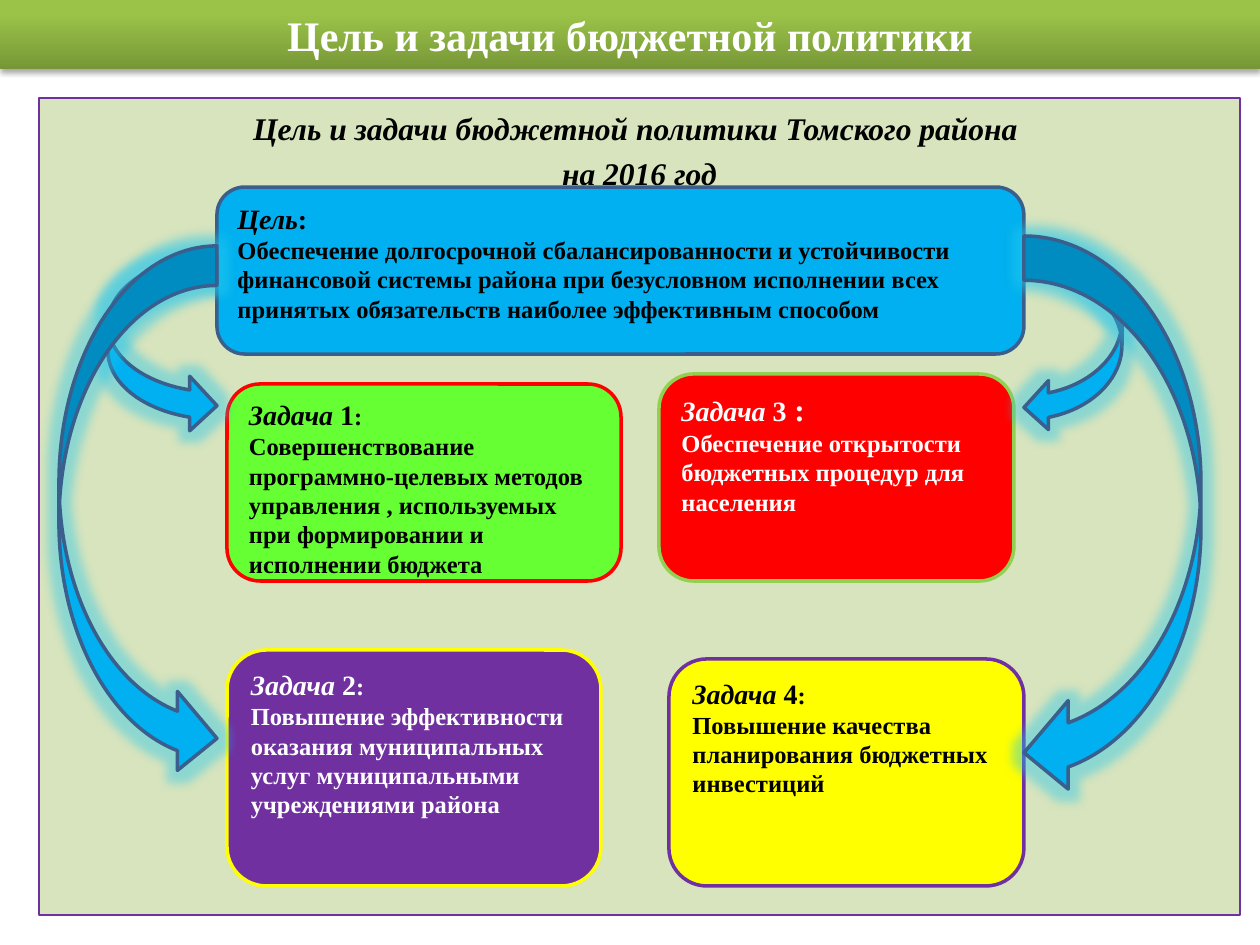
from lxml.etree import SubElement
from pptx import Presentation
from pptx.dml.color import RGBColor
from pptx.enum.shapes import MSO_SHAPE as Shape
from pptx.enum.text import MSO_ANCHOR as Anchor, MSO_AUTO_SIZE as AutoSize, PP_ALIGN as Align
from pptx.oxml.ns import qn
from pptx.util import Emu, Inches, Pt

PX_PER_INCH = 126
FONT = "Times New Roman"
COLORS = {
    "black": "000000", "white": "FFFFFF", "olive": "779737", "lime": "9BC348",
    "panel": "D7E4BD", "purple": "7030A0", "green": "66FF33", "red": "FF0000",
    "yellow": "FFFF00", "leaf": "92D050", "sky": "00B0F0", "navy": "3A5F8C",
    "glow": "1CC4EE",
}


def px(length):
    return Emu(round(length * Inches(1) / PX_PER_INCH))


def rgb(name):
    return RGBColor.from_string(COLORS[name])


def place(part, box):
    part.left, part.top, part.width, part.height = map(px, box)


def paint(part, fill, line, width=2):
    part.fill.solid()
    part.fill.fore_color.rgb = rgb(fill)
    part.line.color.rgb = rgb(line)
    part.line.width = Pt(width)


def add_effect(part, kind, color, opacity, **settings):
    part.shadow.inherit = False
    effects = part._element.spPr.find(qn("a:effectLst"))
    effect = SubElement(effects, qn(f"a:{kind}"), {k: str(v) for k, v in settings.items()})
    tint = SubElement(effect, qn("a:srgbClr"), val=COLORS[color])
    SubElement(tint, qn("a:alpha"), val=str(opacity * 1000))


def style(paragraph, color, size=None, italic=None, align=Align.LEFT):
    paragraph.alignment = align
    font = paragraph.font
    font.name, font.bold, font.italic = FONT, True, italic
    font.color.rgb = rgb(color)
    if size:
        font.size = Pt(size)


def title_bar(title, box):
    place(title, box)
    title.fill.gradient()
    title.fill.gradient_angle = 90
    for stop, color, position in zip(title.fill.gradient_stops, ("olive", "lime"), (0, 0.8)):
        stop.color.rgb = rgb(color)
        stop.position = position
    add_effect(title, "outerShdw", "black", 35, blurRad=Pt(3.1), dist=Pt(1.8),
               dir=90 * 60000, rotWithShape=0)
    frame = title.text_frame
    frame.auto_size = AutoSize.NONE
    frame.vertical_anchor = Anchor.MIDDLE
    frame.text = "Цель и задачи бюджетной политики"
    style(frame.paragraphs[0], "white", 24, align=Align.CENTER)


def heading_panel(body, box):
    place(body, box)
    paint(body, "panel", "purple", 0.75)
    frame = body.text_frame
    frame.auto_size = AutoSize.NONE
    frame.margin_top = px(11)
    frame.text = "Цель и задачи бюджетной политики Томского района \nна 2016 год"
    for paragraph, gap in zip(frame.paragraphs, (0, 4)):
        properties = paragraph._p.get_or_add_pPr()
        properties.set("marL", "0")
        properties.set("indent", "0")
        SubElement(properties, qn("a:buNone"))
        paragraph.space_before = Pt(gap)
        style(paragraph, "black", 18, italic=True, align=Align.CENTER)


def card(shapes, box, fill, line, color, heading, text, inset=6):
    part = shapes.add_shape(Shape.ROUNDED_RECTANGLE, *map(px, box))
    part.shadow.inherit = False
    paint(part, fill, line)
    frame = part.text_frame
    frame.word_wrap = True
    frame.vertical_anchor = Anchor.TOP
    frame.margin_top = px(inset)
    label = frame.paragraphs[0]
    style(label, color)
    for index, (words, size) in enumerate(heading):
        run = label.add_run()
        run.text = words
        run.font.size = Pt(size)
        run.font.italic = index == 0
    detail = frame.add_paragraph()
    detail.text = text
    style(detail, color, 14)


def task_cards(shapes):
    tasks = [
        ((227, 384, 394, 197), "green", "red", "black", "1", (":", 14),
         "Совершенствование программно-целевых методов управления , "
         "используемых при формировании и исполнении бюджета", 4),
        ((227, 650, 374, 236), "purple", "yellow", "white", "2", (":", 14),
         "Повышение эффективности оказания муниципальных услуг "
         "муниципальными учреждениями района", 6),
        ((659, 374, 355, 207), "red", "leaf", "white", "3", (" :", 18),
         "Обеспечение открытости бюджетных процедур для населения", 6),
        ((669, 659, 355, 227), "yellow", "purple", "black", "4", (":", 14),
         "Повышение качества планирования бюджетных инвестиций", 6),
    ]
    for box, fill, line, color, number, colon, text, inset in tasks:
        heading = [("Задача", 16), (f" {number}", 16), colon]
        card(shapes, box, fill, line, color, heading, text, inset)


def goal_arrows(shapes):
    arrows = [
        (Shape.CURVED_LEFT_ARROW, (1024, 246, 98, 186)),
        (Shape.CURVED_LEFT_ARROW, (1024, 236, 177, 561)),
        (Shape.CURVED_RIGHT_ARROW, (108, 256, 109, 177)),
        (Shape.CURVED_RIGHT_ARROW, (59, 246, 158, 532)),
    ]
    for kind, box in arrows:
        arrow = shapes.add_shape(kind, *map(px, box))
        paint(arrow, "sky", "navy")
        add_effect(arrow, "glow", "glow", 40, rad=Pt(11))


def main():
    deck = Presentation()
    deck.slide_width, deck.slide_height = px(1260), px(945)
    slide = deck.slides.add_slide(deck.slide_layouts[1])
    shapes = slide.shapes
    title_bar(shapes.title, (0, 0, 1260, 69))
    heading_panel(slide.placeholders[1], (39, 98, 1201, 817))
    task_cards(shapes)
    card(shapes, (217, 187, 807, 167), "sky", "navy", "black",
         [("Цель", 16), (":", 16)],
         "Обеспечение долгосрочной сбалансированности и устойчивости "
         "финансовой системы района при безусловном исполнении всех "
         "принятых обязательств наиболее эффективным способом")
    goal_arrows(shapes)
    deck.save("out.pptx")


if __name__ == "__main__":
    main()
